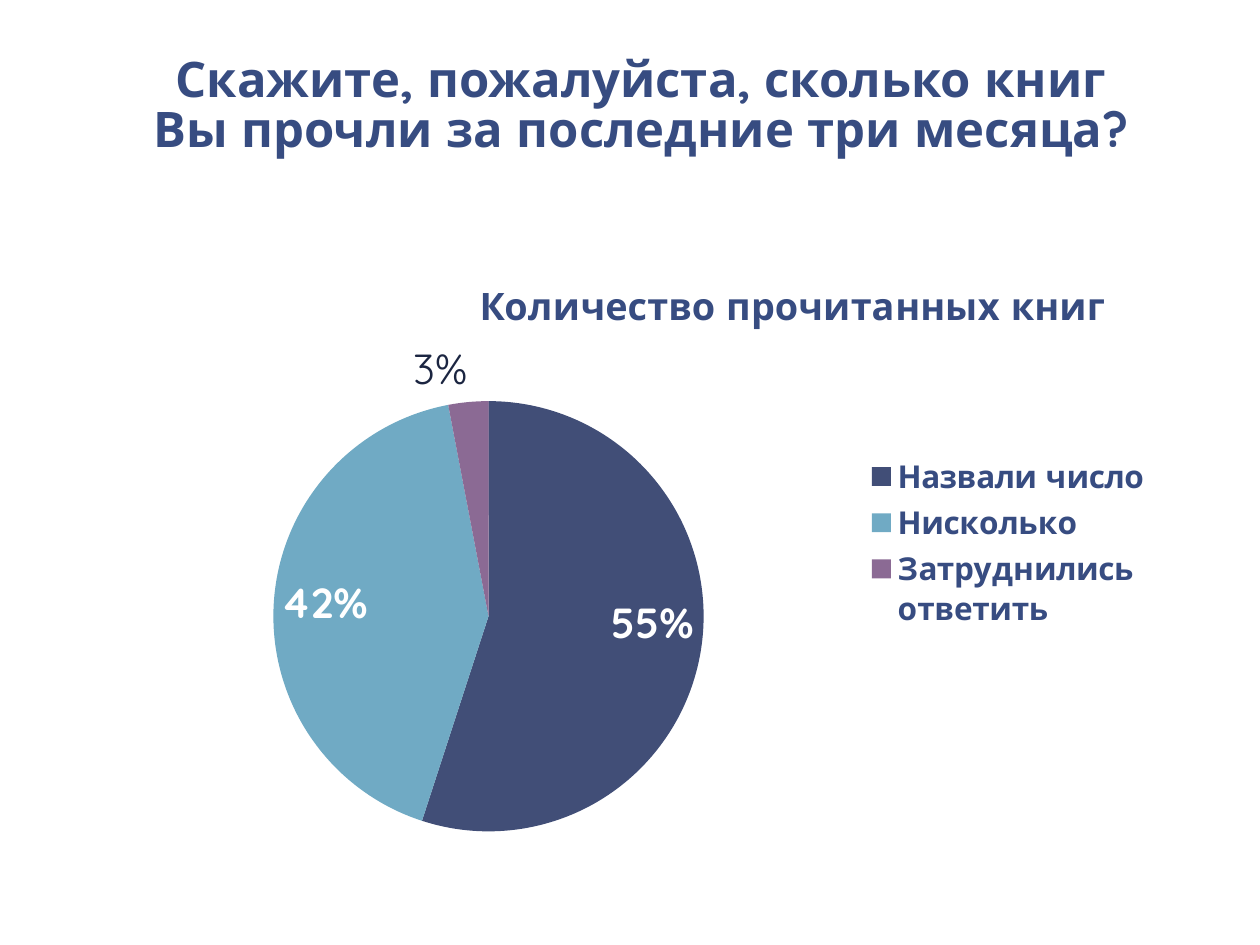
from lxml import etree
from pptx import Presentation
from pptx.chart.data import CategoryChartData
from pptx.dml.color import RGBColor
from pptx.enum.chart import XL_CHART_TYPE, XL_LABEL_POSITION, XL_LEGEND_POSITION
from pptx.enum.text import MSO_ANCHOR, PP_ALIGN
from pptx.oxml.ns import qn
from pptx.util import Inches, Pt

PIE = XL_CHART_TYPE.PIE
INSIDE_END, OUTSIDE_END = XL_LABEL_POSITION.INSIDE_END, XL_LABEL_POSITION.OUTSIDE_END
LEGEND_RIGHT = XL_LEGEND_POSITION.RIGHT
BOTTOM, CENTER = MSO_ANCHOR.BOTTOM, PP_ALIGN.CENTER
TEXT_COLOR = "374C81"


def style_font(font, size, color, bold=True):
    font.name = "Quicksand"
    font.size = Pt(size)
    font.bold = bold
    font.color.rgb = RGBColor.from_string(color)


def place_in_chart(element, index, **position):
    """Give a chart part a manual layout, in fractions of the chart."""
    for old_layout in element.findall(qn("c:layout")):
        element.remove(old_layout)
    layout = etree.Element(qn("c:layout"))
    manual = etree.SubElement(layout, qn("c:manualLayout"))
    if element.tag == qn("c:plotArea"):
        etree.SubElement(manual, qn("c:layoutTarget")).set("val", "inner")
    for side in ("x", "y"):
        etree.SubElement(manual, qn(f"c:{side}Mode")).set("val", "edge")
    for name, fraction in position.items():
        etree.SubElement(manual, qn(f"c:{name}")).set("val", str(fraction))
    element.insert(index, layout)


deck = Presentation()
deck.slide_width, deck.slide_height = Inches(10), Inches(7.5)
page = deck.slides.add_slide(deck.slide_layouts[5])

# Question
title = page.shapes.title
title.left, title.top = Inches(0.92), Inches(0.08)
title.width, title.height = Inches(8.33), Inches(1.24)
frame = title.text_frame
frame.text = "Скажите, пожалуйста, сколько книг Вы прочли за последние три месяца?"
frame.vertical_anchor = BOTTOM
frame.margin_left = frame.margin_right = Inches(0.13)
frame.margin_top = frame.margin_bottom = Inches(0.07)
para = frame.paragraphs[0]
para.alignment = CENTER
para.line_spacing = 0.85
style_font(para.font, 28, TEXT_COLOR)

# Answers
answers = CategoryChartData()
answers.categories = ["Назвали число", "Нисколько", "Затруднились ответить"]
answers.add_series("Series 1", [55, 42, 3])
chart = page.shapes.add_chart(
    PIE, Inches(0.92), Inches(1.86), Inches(8.33), Inches(4.89), answers
).chart
style_font(chart.font, 18, TEXT_COLOR, bold=False)

chart.has_title = True
chart_title = chart.chart_title
chart_title.text_frame.text = "Количество прочитанных книг"
style_font(chart_title.text_frame.paragraphs[0].font, 21.6, TEXT_COLOR)

chart.has_legend = True
legend = chart.legend
legend.position = LEGEND_RIGHT
legend.include_in_layout = False
style_font(legend.font, 18, TEXT_COLOR)

plot = chart.plots[0]
plot.vary_by_categories = True
series = plot.series[0]
for index, color in enumerate(["414E77", "70AAC4", "8B6A94"]):
    fill = series.points[index].format.fill
    fill.solid()
    fill.fore_color.rgb = RGBColor.from_string(color)

labels = series.data_labels
labels.show_value = False
labels.show_percentage = True
labels.number_format = "0%"
labels.number_format_is_linked = False
labels.position = INSIDE_END
style_font(labels.font, 24, "FFFFFF")

small_label = series.points[2].data_label
small_label.text_frame.text = "3%"
small_label.position = OUTSIDE_END
small_run = small_label.text_frame.paragraphs[0].runs[0]
style_font(small_run.font, 24, "1B2541", bold=False)

plot_area = chart.element.find(".//" + qn("c:plotArea"))
place_in_chart(plot_area, 0, x=0.15, y=0.27, w=0.41, h=0.7)
place_in_chart(chart.element.find(".//" + qn("c:title")), 1, x=0.34, y=0.06)
place_in_chart(chart.element.find(".//" + qn("c:legend")), 1, x=0.71, y=0.35, w=0.28, h=0.3)

deck.save("out.pptx")
